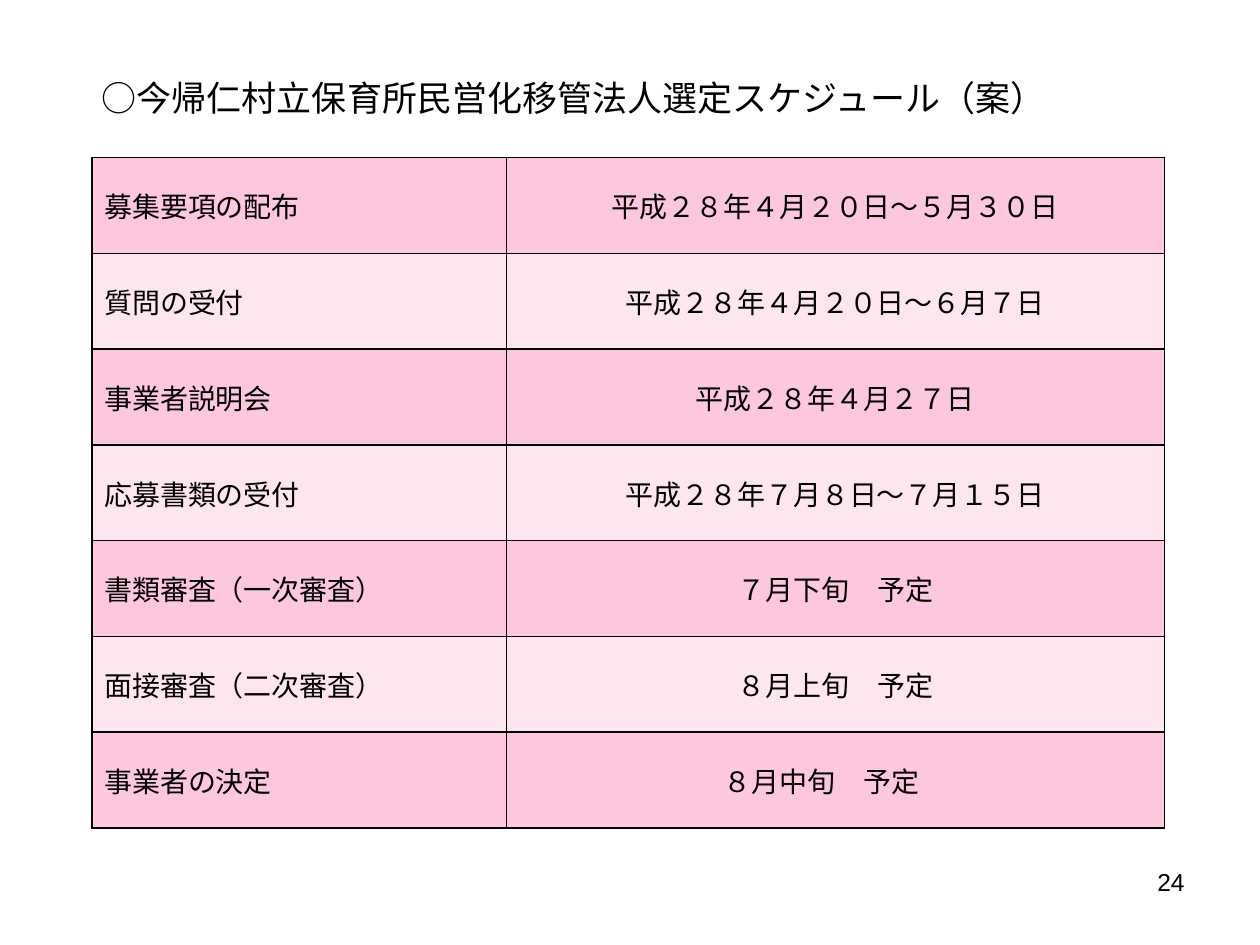
from dataclasses import dataclass

from lxml import etree
from pptx import Presentation
from pptx.dml.color import RGBColor
from pptx.enum.text import MSO_ANCHOR, PP_ALIGN
from pptx.oxml.ns import qn
from pptx.util import Cm, Pt

LEFT, CENTER, RIGHT = PP_ALIGN.LEFT, PP_ALIGN.CENTER, PP_ALIGN.RIGHT
MIDDLE = MSO_ANCHOR.MIDDLE


@dataclass(frozen=True)
class Theme:
    ink: str = "000000"
    bands: tuple = ("FDC7DE", "FEE6F0")
    font: str = "Karla"
    num_font: str = "Arial"
    title: int = 20
    body: int = 16
    num: int = 14
    line: int = 1


THEME = Theme()

TITLE = "○今帰仁村立保育所民営化移管法人選定スケジュール（案）"
STEPS = [
    ("募集要項の配布", "平成２８年４月２０日～５月３０日"),
    ("質問の受付", "平成２８年４月２０日～６月７日"),
    ("事業者説明会", "平成２８年４月２７日"),
    ("応募書類の受付", "平成２８年７月８日～７月１５日"),
    ("書類審査（一次審査）", "７月下旬　予定"),
    ("面接審査（二次審査）", "８月上旬　予定"),
    ("事業者の決定", "８月中旬　予定　"),
]
COLS = (Cm(8.36), Cm(13.26))
ROW = Cm(1.93)


def write(frame, text, size, font=THEME.font, align=LEFT):
    para = frame.paragraphs[0]
    para.alignment = align
    run = para.add_run()
    run.text = text
    run.font.size = Pt(size)
    run.font.name = font
    run.font.color.rgb = RGBColor.from_string(THEME.ink)


def add_text(slide, box, *style):
    frame = slide.shapes.add_textbox(*map(Cm, box)).text_frame
    frame.word_wrap = True
    write(frame, *style)


def add_edges(cell):
    """Draw a solid line on all four sides of the cell."""
    props = cell._tc.get_or_add_tcPr()
    for at, side in enumerate(("lnL", "lnR", "lnT", "lnB")):
        line = etree.Element(qn(f"a:{side}"), w=str(Pt(THEME.line)))
        fill = etree.SubElement(line, qn("a:solidFill"))
        etree.SubElement(fill, qn("a:srgbClr"), val=THEME.ink)
        props.insert(at, line)


def fill_cell(cell, text, band, align):
    cell.fill.solid()
    cell.fill.fore_color.rgb = RGBColor.from_string(band)
    cell.vertical_anchor = MIDDLE
    write(cell.text_frame, text, THEME.body, align=align)
    add_edges(cell)


def add_plan(slide):
    table = slide.shapes.add_table(
        len(STEPS), len(COLS), Cm(1.85), Cm(3.18), sum(COLS), ROW * len(STEPS)
    ).table
    for col, width in zip(table.columns, COLS):
        col.width = width
    for i, step in enumerate(STEPS):
        table.rows[i].height = ROW
        band = THEME.bands[i % 2]
        for j, align in enumerate((LEFT, CENTER)):
            fill_cell(table.cell(i, j), step[j], band, align)


def main():
    deck = Presentation()
    deck.slide_width, deck.slide_height = Cm(25.4), Cm(19.05)
    slide = deck.slides.add_slide(deck.slide_layouts[6])
    add_text(slide, (18.2, 17.35, 5.93, 1.32), "24", THEME.num, THEME.num_font, RIGHT)
    add_plan(slide)
    add_text(slide, (1.8, 1.42, 19.7, 1.12), TITLE, THEME.title)
    deck.save("out.pptx")


if __name__ == "__main__":
    main()
